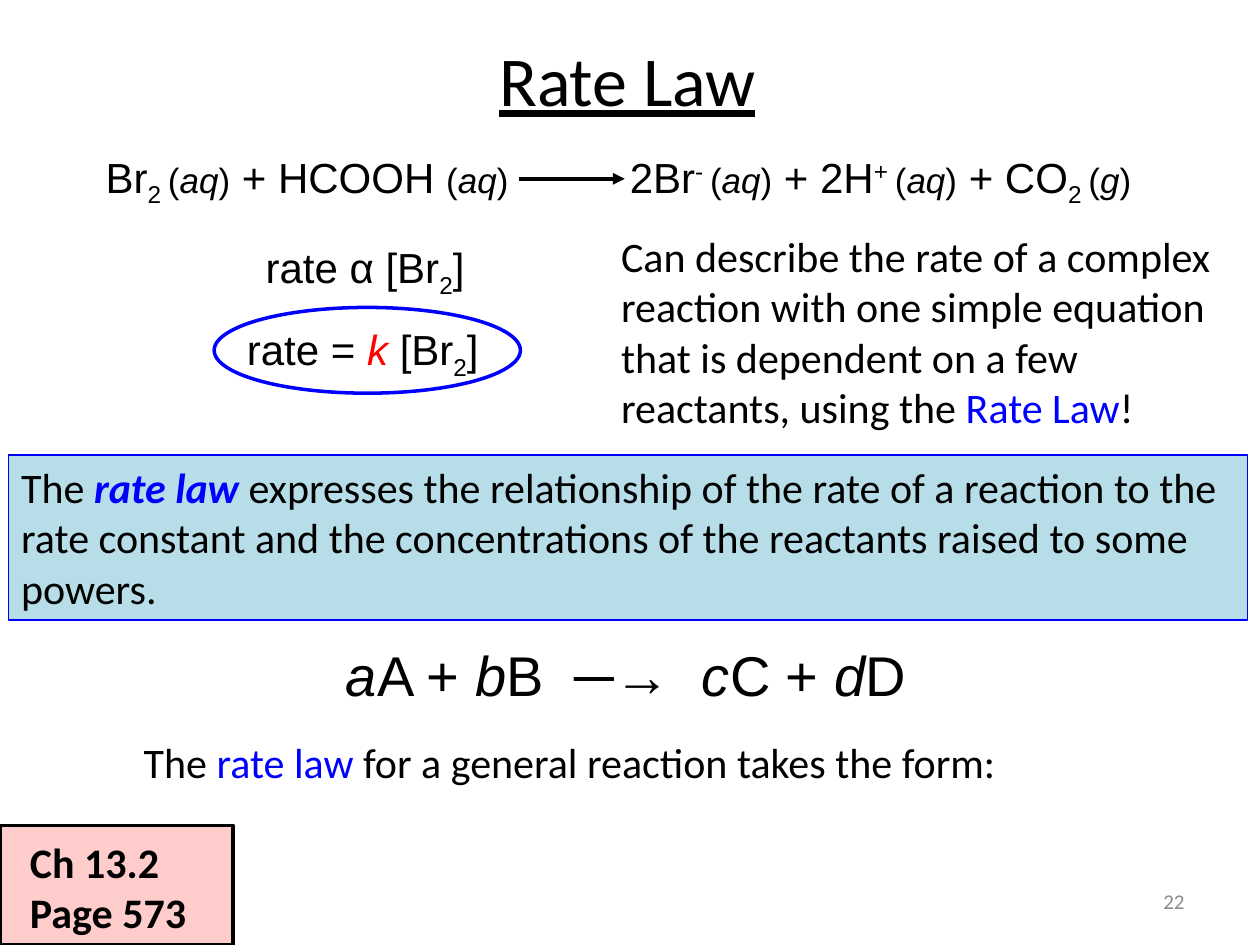
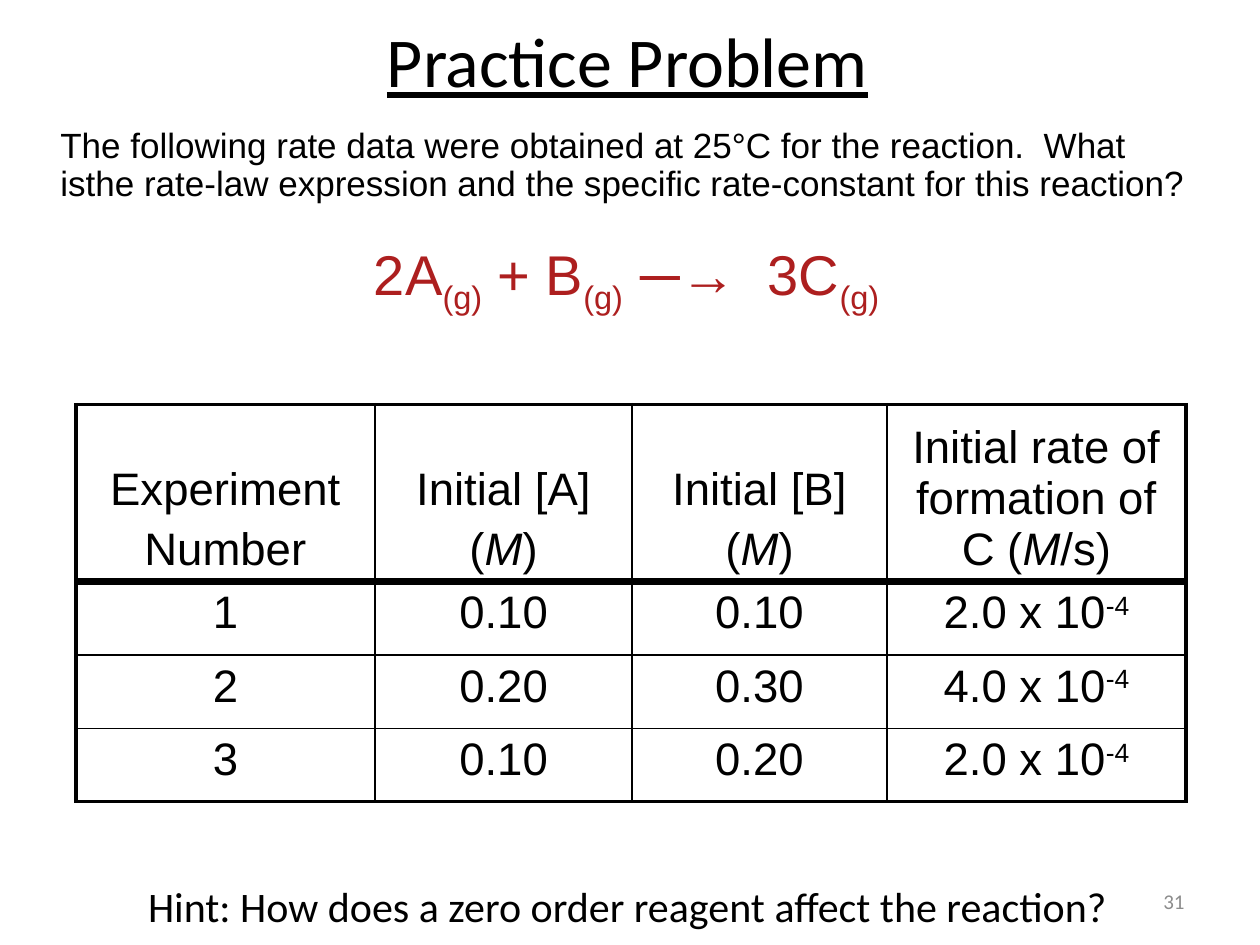
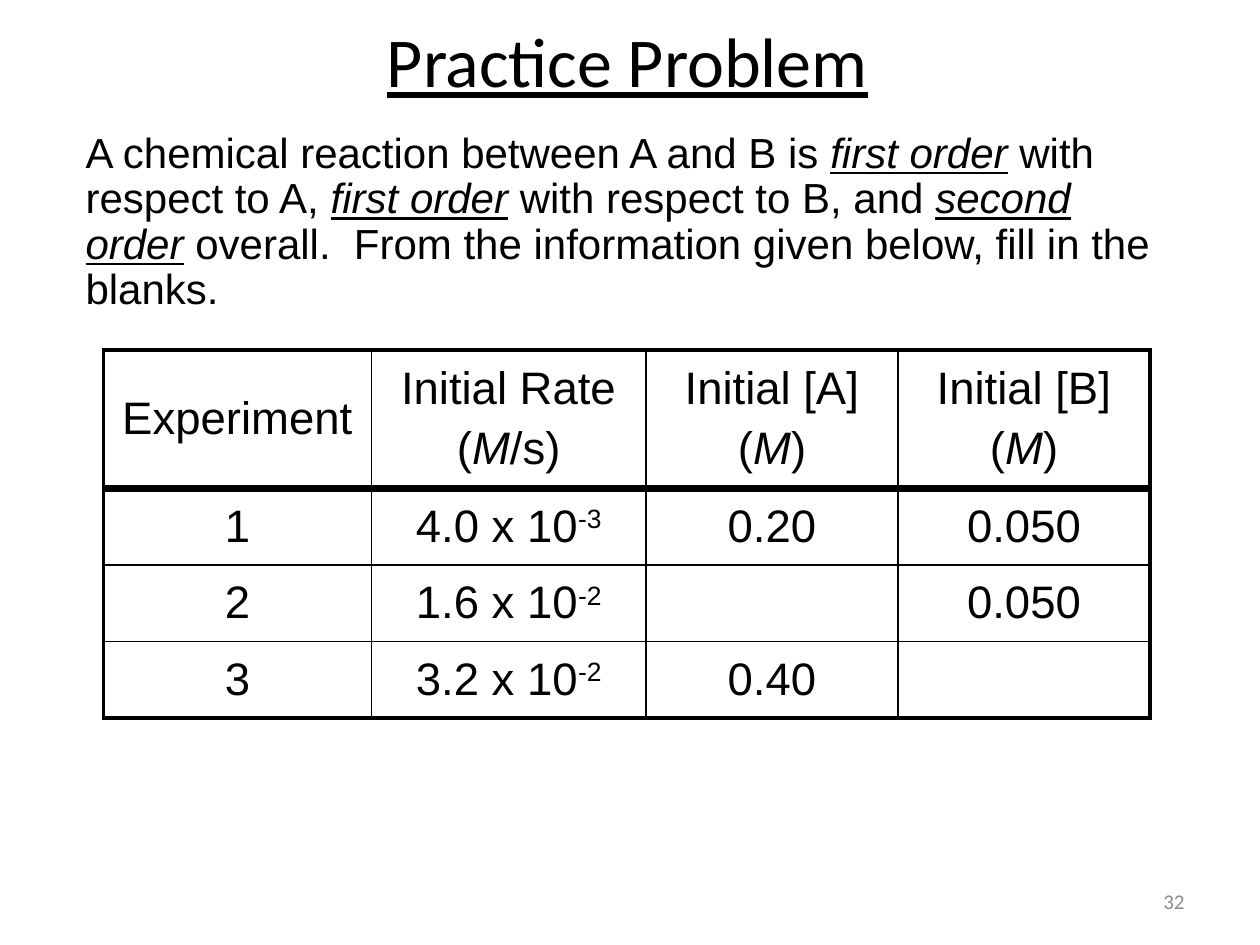
"""Build three chemistry slides on rate laws."""
from lxml import etree
from pptx import Presentation
from pptx.dml.color import RGBColor
from pptx.enum.shapes import MSO_CONNECTOR, MSO_SHAPE
from pptx.enum.text import MSO_ANCHOR, PP_ALIGN
from pptx.oxml.ns import qn
from pptx.util import Pt

BLACK = RGBColor(0x00, 0x00, 0x00)
BLUE = RGBColor(0x00, 0x00, 0xFF)
RED = RGBColor(0xFF, 0x00, 0x00)
DARK_RED = RGBColor(0xAD, 0x1F, 0x1F)
PALE_BLUE = RGBColor(0xB7, 0xDE, 0xE8)
GRAY = RGBColor(0x8C, 0x8C, 0x8C)
LEFT, CENTER, RIGHT = PP_ALIGN.LEFT, PP_ALIGN.CENTER, PP_ALIGN.RIGHT
TOP, MIDDLE, BOTTOM = MSO_ANCHOR.TOP, MSO_ANCHOR.MIDDLE, MSO_ANCHOR.BOTTOM
RECTANGLE, OVAL = MSO_SHAPE.RECTANGLE, MSO_SHAPE.OVAL
STRAIGHT = MSO_CONNECTOR.STRAIGHT

ITALIC = {"italic": True}
BOLD = {"bold": True}
ORDER = {"italic": True, "underline": True}
IN_BLUE = {"color": BLUE}
SUB = {"baseline": -25000}
SUPER = {"baseline": 30000}
SMALL = {"size": 20}
AQUEOUS = [("(", SMALL), ("aq", SMALL | ITALIC), (")", SMALL)]
GAS = [("(", SMALL), ("g", SMALL | ITALIC), (")", SMALL)]


def write_runs(paragraph, runs, size, font="Arial", color=BLACK):
    """Add plain strings or (text, style) pairs as runs."""
    for item in runs:
        text, style = (item, {}) if isinstance(item, str) else item
        run = paragraph.add_run()
        run.text = text
        run.font.name = font
        run.font.size = Pt(style.get("size", size))
        run.font.color.rgb = style.get("color", color)
        run.font.bold = style.get("bold", False)
        run.font.italic = style.get("italic", False)
        run.font.underline = style.get("underline", False)
        if "baseline" in style:
            run.font._element.set("baseline", str(style["baseline"]))


def add_text(slide, box, paragraphs, size, font="Arial", color=BLACK, align=LEFT, anchor=TOP):
    """Add a wrapped text box and return its text frame."""
    frame = slide.shapes.add_textbox(*map(Pt, box)).text_frame
    frame.word_wrap = True
    frame.vertical_anchor = anchor
    for index, runs in enumerate(paragraphs):
        paragraph = frame.add_paragraph() if index else frame.paragraphs[0]
        paragraph.alignment = align
        write_runs(paragraph, runs, size, font, color)
    return frame


presentation = Presentation()
presentation.slide_width, presentation.slide_height = Pt(720), Pt(540)

slides = []
for title, title_box, number in [
    ("Rate Law", (34.5, 0, 648, 90), "22"),
    ("Practice Problem", (22.5, 0, 672, 68.5), "31"),
    ("Practice Problem", (22.5, 0, 672, 68.5), "32"),
]:
    slide = presentation.slides.add_slide(presentation.slide_layouts[6])
    add_text(slide, title_box, [[(title, {"underline": True})]], 40, "Calibri",
             align=CENTER, anchor=MIDDLE)
    add_text(slide, (516, 500.5, 168, 28.5), [[number]], 12, "Calibri", GRAY, RIGHT, MIDDLE)
    slides.append(slide)
rate_law, zero_order, fill_blanks = slides

add_text(rate_law, (144.7, 134.6, 130.5, 36), [["rate α [Br", ("2", SUB), "]"]], 24)
add_text(rate_law, (134, 181.4, 147.5, 36),
         [["rate = ", ("k", ITALIC | {"color": RED}), " [Br", ("2", SUB), "]"]], 24)

equation = add_text(rate_law, (53.3, 82.8, 620, 36), [[
    "Br", ("2 ", SUB), *AQUEOUS, " + HCOOH ", *AQUEOUS,
    "\t2Br", ("- ", SUPER), *AQUEOUS, " + 2H", ("+ ", SUPER), *AQUEOUS,
    " + CO", ("2 ", SUB), *GAS]], 24)
properties = equation.paragraphs[0]._p.get_or_add_pPr()
tabs = etree.SubElement(properties, qn("a:tabLst"))
etree.SubElement(tabs, qn("a:tab"), pos=str(Pt(299.5)), algn="l")

arrow = rate_law.shapes.add_connector(STRAIGHT, Pt(296.6), Pt(102.2), Pt(357), Pt(102.2))
arrow.line.color.rgb = BLACK
arrow.line.width = Pt(2.25)
etree.SubElement(arrow.line._get_or_add_ln(), qn("a:tailEnd"), type="triangle")
etree.SubElement(arrow._element.spPr, qn("a:effectLst"))

add_text(rate_law, (347.8, 128.2, 370, 124), [[
    "Can describe the rate of a complex reaction with one simple equation that is "
    "dependent on a few reactants, using the ", ("Rate Law", IN_BLUE), "!"]], 24, "Calibri")

panels = []
for kind, box, fill, line, width in [
    (OVAL, (122.4, 175.7, 175, 49), None, BLUE, 2),
    (RECTANGLE, (5, 260, 708, 94.3), PALE_BLUE, BLUE, 0.75),
    (RECTANGLE, (0, 471.6, 133.2, 68.4), RED, BLACK, 2),
]:
    panel = rate_law.shapes.add_shape(kind, *map(Pt, box))
    panel.shadow.inherit = False
    if fill is None:
        panel.fill.background()
    else:
        panel.fill.solid()
        panel.fill.fore_color.rgb = fill
    panel.line.color.rgb = line
    panel.line.width = Pt(width)
    panels.append(panel)
rate_circle, definition, chapter_tag = panels

definition.text_frame.word_wrap = True
definition.text_frame.vertical_anchor = TOP
definition.text_frame.paragraphs[0].alignment = LEFT
write_runs(definition.text_frame.paragraphs[0], [
    "The ", ("rate law ", IN_BLUE | BOLD | ITALIC),
    "expresses the relationship of the rate of a reaction to the rate constant and the "
    "concentrations of the reactants raised to some powers."], 24, "Calibri")

tag_color = chapter_tag._element.spPr.find(qn("a:solidFill"))[0]
etree.SubElement(tag_color, qn("a:alpha"), val="20000")
add_text(rate_law, (10, 474.5, 117.5, 65.5), [[("Ch 13.2", BOLD)], [("Page 573", BOLD)]],
         24, "Calibri")

add_text(rate_law, (162.7, 362.2, 390, 46), [[
    ("a", ITALIC), "A + ", ("b", ITALIC), "B  ─→  ",
    ("c", ITALIC), "C + ", ("d", ITALIC), "D"]], 32, align=CENTER)
add_text(rate_law, (75, 417.6, 603, 36), [[
    "The ", ("rate law ", IN_BLUE), "for a general reaction takes the form:"]], 24, "Calibri")

question = add_text(zero_order, (27.4, 69.8, 660, 51), [[
    "The following rate data were obtained at 25°C for the reaction.  What isthe "
    "rate-law expression and the specific rate-constant for this reaction?"]], 20)
question.paragraphs[0].line_spacing = 0.9
add_text(zero_order, (118, 133.2, 480, 46), [[
    "2A", ("(g)", SUB), " + B", ("(g)  ", SUB), "─→  3C", ("(g)", SUB)]],
    32, color=DARK_RED, align=CENTER)
add_text(zero_order, (22.5, 499.7, 672, 36),
         [["Hint: How does a zero order reagent affect the reaction?"]],
         24, "Calibri", align=CENTER)

question = add_text(fill_blanks, (41.8, 72, 630, 112), [[
    "A chemical reaction between A and B is ", ("first order", ORDER),
    " with respect to A, ", ("first order", ORDER), " with respect to B, and ",
    ("second order", ORDER),
    " overall.  From the information given below, fill in the blanks."]], 24)
question.paragraphs[0].line_spacing = 0.9

MOLAR = ["(", ("M", ITALIC), ")"]
INITIAL_A = [["Initial [A]"], MOLAR]
INITIAL_B = [["Initial [B]"], MOLAR]
tables = [
    (zero_order, (43.3, 231.2), (171, 147, 145.5, 171), (101, 42), BOTTOM, TOP,
     [[["Experiment"], ["Number"]], INITIAL_A, INITIAL_B,
      [["Initial rate of formation of C (", ("M", ITALIC), "/s)"]]],
     [("1", "0.10", "0.10", "2.0 x 10^-4"),
      ("2", "0.20", "0.30", "4.0 x 10^-4"),
      ("3", "0.10", "0.20", "2.0 x 10^-4")]),
    (fill_blanks, (59.2, 200, ), (153, 157, 144, 144), (79, 43.8), MIDDLE, MIDDLE,
     [[["Experiment"]], [["Initial Rate"], ["(", ("M", ITALIC), "/s)"]],
      INITIAL_A, INITIAL_B],
     [("1", "4.0 x 10^-3", "0.20", "0.050"),
      ("2", "1.6 x 10^-2", "", "0.050"),
      ("3", "3.2 x 10^-2", "0.40", "")]),
]
for slide, corner, widths, heights, head_anchor, body_anchor, header, records in tables:
    rows = [header]
    for record in records:
        cells = []
        for value in record:
            base, _, exponent = value.partition("^")
            cells.append([[base, (exponent, SUPER)] if exponent else [base] if base else []])
        rows.append(cells)
    row_heights = [heights[0]] + [heights[1]] * len(records)
    table = slide.shapes.add_table(len(rows), len(widths), *map(
        Pt, (*corner, sum(widths), sum(row_heights)))).table
    table.first_row = table.horz_banding = False
    for column, width in zip(table.columns, widths):
        column.width = Pt(width)
    for row_index, cells in enumerate(rows):
        table.rows[row_index].height = Pt(row_heights[row_index])
        for column_index, paragraphs in enumerate(cells):
            cell = table.cell(row_index, column_index)
            cell.fill.background()
            cell.vertical_anchor = body_anchor if row_index else head_anchor
            for index, runs in enumerate(paragraphs):
                paragraph = cell.text_frame.paragraphs[0]
                if index:
                    paragraph = cell.text_frame.add_paragraph()
                    paragraph.space_before = Pt(5.2)
                paragraph.alignment = CENTER
                write_runs(paragraph, runs, 26)
            borders = {
                "a:lnL": 1 if column_index else 2.25,
                "a:lnR": 2.25 if column_index == len(widths) - 1 else 1,
                "a:lnT": {0: 2.25, 1: 4.5}.get(row_index, 1),
                "a:lnB": {0: 4.5, len(rows) - 1: 2.25}.get(row_index, 1),
            }
            cell_properties = cell._tc.get_or_add_tcPr()
            for position, (side, weight) in enumerate(borders.items()):
                border = etree.Element(qn(side), w=str(Pt(weight)))
                border_fill = etree.SubElement(border, qn("a:solidFill"))
                etree.SubElement(border_fill, qn("a:srgbClr"), val=str(BLACK))
                cell_properties.insert(position, border)

presentation.save("out.pptx")
